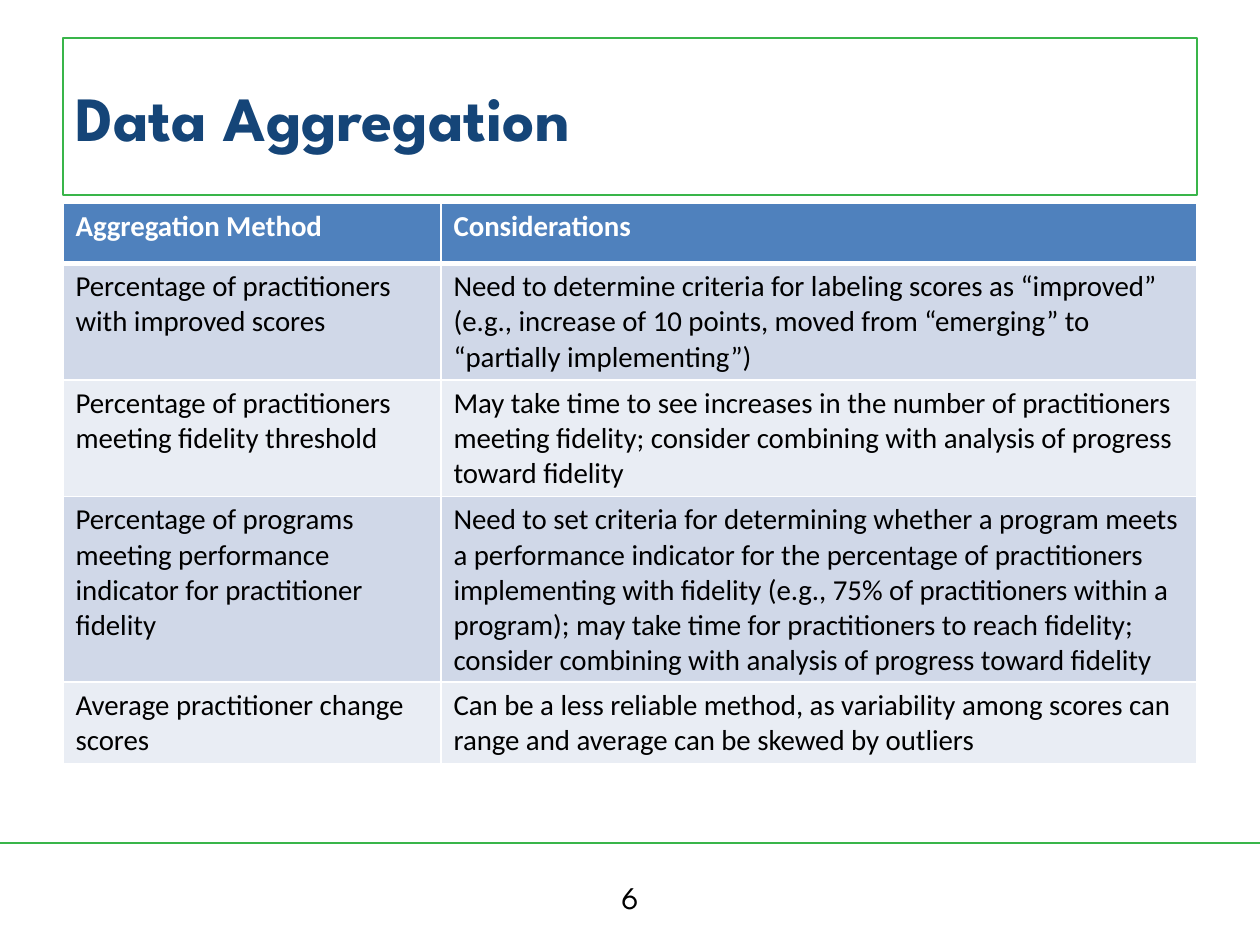
from typing import NamedTuple

import pptx
import pptx.dml.color
import pptx.enum.shapes
import pptx.enum.text
import pptx.oxml
import pptx.oxml.ns
import pptx.util

Inches = pptx.util.Inches
Pt = pptx.util.Pt
Align = pptx.enum.text.PP_ALIGN
Anchor = pptx.enum.text.MSO_ANCHOR

W, H = 10, 7.5
MARGIN = 0.05 * W
GREEN, NAVY, BLUE = "39B54A", "154578", "4F81BD"
BLACK, WHITE = "000000", "FFFFFF"
BANDS = ("D0D8E8", "E9EDF4")
HEADING_FONT, BODY_FONT = "League Spartan", "Calibri"


class Row(NamedTuple):
    method: str
    considerations: str
    height: float


ROWS = [
    Row("Aggregation Method", "Considerations", 0.48),
    Row("Percentage of practitioners with improved scores",
        "Need to determine criteria for labeling scores as “improved” (e.g., increase of "
        "10 points, moved from “emerging” to “partially implementing”)", 0.83),
    Row("Percentage of practitioners meeting fidelity threshold",
        "May take time to see increases in the number of practitioners meeting fidelity; "
        "consider combining with analysis of progress toward fidelity", 0.83),
    Row("Percentage of programs meeting performance indicator for practitioner fidelity",
        "Need to set criteria for determining whether a program meets a performance "
        "indicator for the percentage of practitioners implementing with fidelity (e.g., "
        "75% of practitioners within a program); may take time for practitioners to reach "
        "fidelity; consider combining with analysis of progress toward fidelity", 1.14),
    Row("Average practitioner change scores",
        "Can be a less reliable method, as variability among scores can range and average "
        "can be skewed by outliers", 0.48),
]


def rgb(value: str) -> pptx.dml.color.RGBColor:
    return pptx.dml.color.RGBColor.from_string(value)


def write(tf, text: str, *, size: float, font: str, color: str = BLACK,
          bold: bool = False, align=Align.LEFT) -> None:
    tf.word_wrap = True
    p = tf.paragraphs[0]
    p.alignment = align
    r = p.add_run()
    r.text = text
    r.font.size, r.font.name, r.font.bold = Pt(size), font, bold
    r.font.color.rgb = rgb(color)


def set_borders(cell, bottom: float) -> None:
    tc_pr = cell._tc.get_or_add_tcPr()
    widths = {"lnL": 1, "lnR": 1, "lnT": 1, "lnB": bottom}
    for i, (tag, width) in enumerate(widths.items()):
        tc_pr.insert(i, pptx.oxml.parse_xml(
            f'<a:{tag} {pptx.oxml.ns.nsdecls("a")} w="{Pt(width)}"><a:solidFill>'
            f'<a:srgbClr val="{WHITE}"/></a:solidFill></a:{tag}>'))


def add_rule(s, y: float) -> None:
    line = s.shapes.add_connector(pptx.enum.shapes.MSO_CONNECTOR.STRAIGHT,
                                  0, Inches(y), Inches(W), Inches(y))
    line.line.color.rgb = rgb(GREEN)
    line.line.width = Pt(1.5)
    line._element.spPr.append(
        pptx.oxml.parse_xml(f'<a:effectLst {pptx.oxml.ns.nsdecls("a")}/>'))


def add_title(s, text: str) -> None:
    title = s.shapes.title
    title.left, title.top = Inches(MARGIN), Inches(0.04 * H)
    title.width, title.height = Inches(W - 2 * MARGIN), Inches(H / 6)
    title.line.color.rgb = rgb(GREEN)
    title.line.width = Pt(1)
    title.text_frame.vertical_anchor = Anchor.MIDDLE
    write(title.text_frame, text, size=36, font=HEADING_FONT, color=NAVY, bold=True)


def add_table(s, rows: list[Row], top: float) -> None:
    width = W - 2 * MARGIN
    table = s.shapes.add_table(len(rows), 2, Inches(MARGIN), Inches(top), Inches(width),
                               Inches(sum(row.height for row in rows))).table
    for column, share in zip(table.columns, (1 / 3, 2 / 3)):
        column.width = Inches(width * share)
    for i, row in enumerate(rows):
        header = i == 0
        table.rows[i].height = Inches(row.height)
        for cell, text in zip(table.rows[i].cells, (row.method, row.considerations)):
            cell.fill.solid()
            cell.fill.fore_color.rgb = rgb(BLUE if header else BANDS[(i - 1) % 2])
            set_borders(cell, bottom=3 if header else 1)
            write(cell.text_frame, text, size=16.5, font=BODY_FONT,
                  color=WHITE if header else BLACK, bold=header)


def add_page_number(s, number: int) -> None:
    width = 0.7 * W / 3
    box = s.shapes.add_textbox(Inches((W - width) / 2), Inches(6.92),
                               Inches(width), Inches(0.4))
    write(box.text_frame, str(number), size=18, font=HEADING_FONT, align=Align.CENTER)


def main() -> None:
    prs = pptx.Presentation()
    prs.slide_width, prs.slide_height = Inches(W), Inches(H)
    s = prs.slides.add_slide(prs.slide_layouts[5])

    # Heading and footer
    add_rule(s, 6.69)
    add_title(s, "Data Aggregation")
    add_page_number(s, 6)

    # Methods and their considerations
    add_table(s, ROWS, top=1.61)

    prs.save("out.pptx")


if __name__ == "__main__":
    main()
